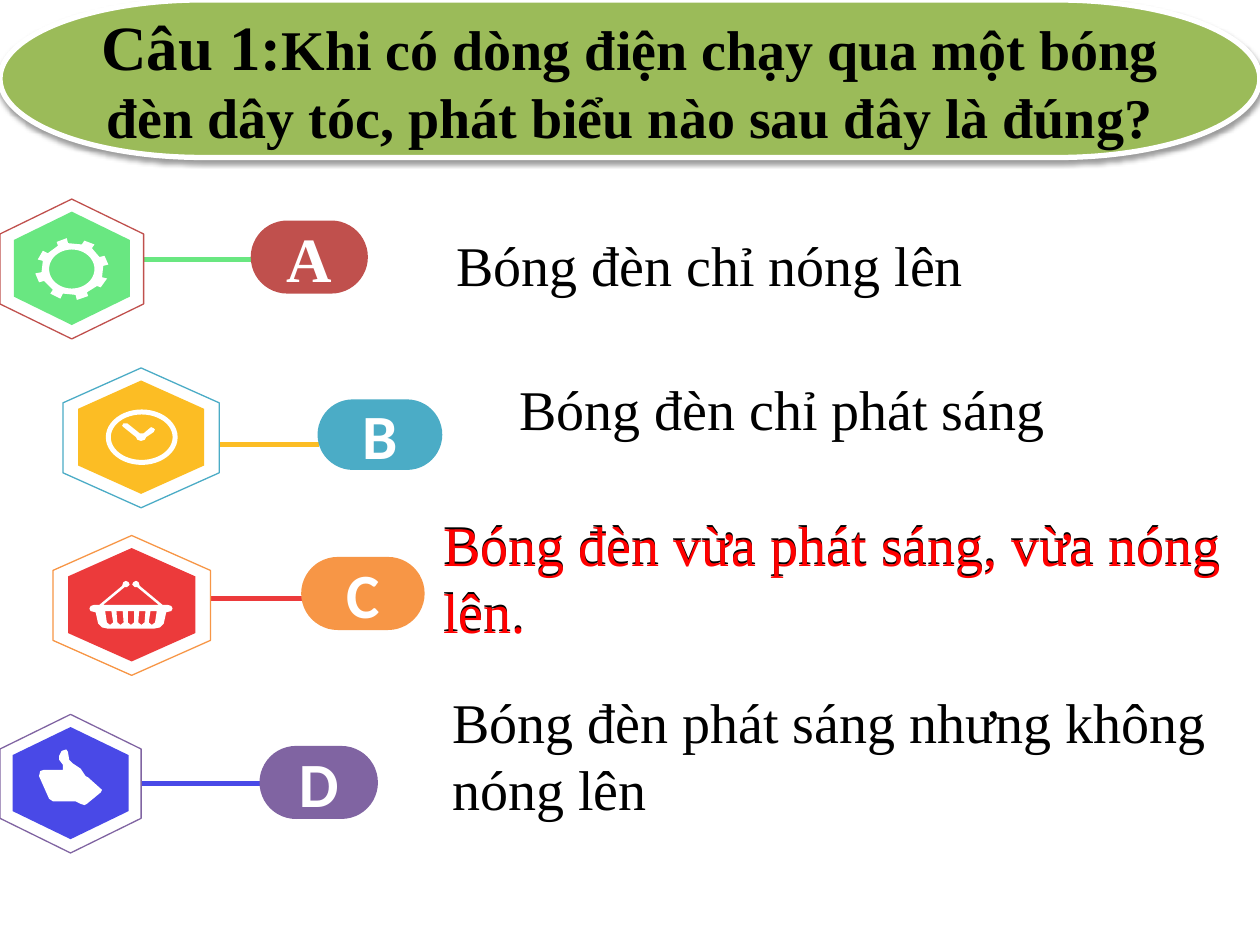
from dataclasses import dataclass
from math import cos, pi, sin

from lxml.etree import SubElement
from pptx import Presentation
from pptx.dml.color import RGBColor
from pptx.enum.shapes import MSO_CONNECTOR, MSO_SHAPE
from pptx.enum.text import MSO_ANCHOR, MSO_AUTO_SIZE, PP_ALIGN
from pptx.oxml.ns import qn
from pptx.util import Inches, Pt

Point = tuple[float, float]
Contour = list[Point]

COLORS = {
    "white": "FFFFFF", "black": "000000", "answer": "FF0000", "banner": "9BBB59",
    "brick": "C0504D", "teal": "4BACC6", "orange": "F79646", "purple": "8064A2",
    "green": "69E781", "yellow": "FCBD24", "red": "EC3A3B", "blue": "4949E7",
}
SERIF, SANS = "Times New Roman", "Calibri"


@dataclass
class Choice:
    letter: str
    letter_font: str
    text: str
    accent: str
    bright: str
    hexagon: tuple[float, float, float, float]
    border: float
    line: tuple[float, float, float]
    pill: tuple[float, float, float, float]
    text_box: tuple[float, float, float, float]
    indent: float


CORRECT = "Bóng đèn vừa phát sáng, vừa nóng lên."
CHOICES = [
    Choice("A", SERIF, "Bóng đèn chỉ nóng lên", "brick", "green", (0, 1.58, 1.14, 1.11),
           0.11, (1.07, 1.99, 2.06), (1.99, 1.75, 0.93, 0.58), (3.43, 1.88, 6.57, 0.44), 0.19),
    Choice("B", SANS, "Bóng đèn chỉ phát sáng", "teal", "yellow", (0.5, 2.92, 1.24, 1.11),
           0.12, (1.64, 2.53, 3.53), (2.52, 3.17, 0.99, 0.56), (3.93, 3.02, 6.07, 0.44), 0.19),
    Choice("C", SANS, CORRECT, "orange", "red", (0.42, 4.25, 1.25, 1.11),
           0.12, (1.56, 2.48, 4.75), (2.39, 4.42, 0.98, 0.58), (3.42, 4.35, 6.58, 0.44), 0.1),
    Choice("D", SANS, "Bóng đèn phát sáng nhưng không nóng lên", "purple", "blue",
           (0, 5.67, 1.12, 1.1),
           0.1, (1.04, 2.06, 6.22), (2.06, 5.92, 0.94, 0.58), (3.49, 5.77, 6.26, 0.44), 0.1),
]

GEAR_TEETH = [
    (0.53, 1.89), (0.45, 1.92), (0.46, 1.95), (0.38, 2.01), (0.34, 1.99), (0.3, 2.06),
    (0.34, 2.07), (0.33, 2.16), (0.28, 2.17), (0.31, 2.24), (0.35, 2.23), (0.42, 2.3),
    (0.4, 2.33), (0.48, 2.37), (0.5, 2.33), (0.6, 2.34), (0.61, 2.38), (0.7, 2.35),
    (0.69, 2.32), (0.77, 2.27), (0.8, 2.28), (0.85, 2.21), (0.81, 2.2), (0.82, 2.11),
    (0.86, 2.1), (0.83, 2.03), (0.79, 2.04), (0.73, 1.97), (0.75, 1.94), (0.67, 1.91),
    (0.65, 1.94), (0.54, 1.93),
]
CLOCK_HANDS = [
    (1, 3.36), (0.98, 3.36), (0.97, 3.38), (0.98, 3.39), (1.08, 3.47), (1.09, 3.49),
    (1.12, 3.5), (1.15, 3.49), (1.16, 3.47), (1.22, 3.43), (1.23, 3.41), (1.22, 3.4),
    (1.2, 3.39), (1.14, 3.44), (1.11, 3.44), (1.01, 3.36),
]
BASKET_CENTER = 1.04
BASKET_RIGHT = [
    (1.04, 4.8), (1.26, 4.8), (1.09, 4.66), (1.07, 4.66), (1.05, 4.64), (1.06, 4.62),
    (1.08, 4.61), (1.1, 4.62), (1.11, 4.65), (1.29, 4.8), (1.33, 4.8), (1.36, 4.81),
    (1.37, 4.83), (1.36, 4.85), (1.32, 4.86), (1.3, 4.95), (1.27, 4.98), (1.22, 4.99),
]
THUMB = [
    (0.52, 5.95), (0.49, 5.96), (0.47, 6), (0.47, 6.03), (0.5, 6.07), (0.5, 6.11),
    (0.35, 6.11), (0.32, 6.12), (0.31, 6.16), (0.39, 6.34), (0.42, 6.36), (0.6, 6.36),
    (0.64, 6.38), (0.67, 6.39), (0.69, 6.38), (0.8, 6.29), (0.81, 6.27), (0.8, 6.26),
    (0.7, 6.17), (0.68, 6.16), (0.64, 6.1), (0.58, 6.06), (0.55, 6.03), (0.54, 5.97),
    (0.53, 5.95),
]


def color(name: str) -> RGBColor:
    return RGBColor.from_string(COLORS[name])


def paint(shape, fill: str, line: str | None = None, width: float = 0.75) -> None:
    shape.shadow.inherit = False
    shape.fill.solid()
    shape.fill.fore_color.rgb = color(fill)
    if line:
        shape.line.color.rgb = color(line)
        shape.line.width = Pt(width)
    else:
        shape.line.fill.background()


def style(span, size: float, font: str, name: str, bold: bool = False) -> None:
    span.font.size, span.font.name, span.font.bold = Pt(size), font, bold
    span.font.color.rgb = color(name)


def draw_outline(slide, contours: list[Contour], fill: str, line: str | None = None) -> None:
    """Draw closed contours as one shape; contours inside another are holes."""
    scaled = [[(Inches(x), Inches(y)) for x, y in contour] for contour in contours]
    builder = slide.shapes.build_freeform(*scaled[0][0])
    builder.add_line_segments(scaled[0][1:], close=True)
    for hole in scaled[1:]:
        builder.move_to(*hole[0])
        builder.add_line_segments(hole[1:], close=True)
    paint(builder.convert_to_shape(), fill, line)


def hexagon(left: float, top: float, width: float, height: float) -> Contour:
    middle, right = left + width / 2, left + width
    upper, lower = top + height / 4, top + height * 3 / 4
    return [(middle, top), (left, upper), (left, lower),
            (middle, top + height), (right, lower), (right, upper)]


def draw_gear(slide) -> None:
    steps = [2 * pi * step / 48 for step in range(48)]
    hole = [(0.57 + 0.18 * cos(a), 2.135 + 0.155 * sin(a)) for a in steps]
    draw_outline(slide, [GEAR_TEETH, hole], "white")


def draw_clock(slide) -> None:
    ring = slide.shapes.add_shape(MSO_SHAPE.DONUT, *map(Inches, (0.84, 3.25, 0.57, 0.44)))
    ring.adjustments[0] = 0.09
    paint(ring, "white")
    draw_outline(slide, [CLOCK_HANDS], "white")


def draw_basket(slide) -> None:
    mirrored = [(2 * BASKET_CENTER - x, y) for x, y in reversed(BASKET_RIGHT[1:])]
    slots = []
    for index in range(-2, 3):
        top, bottom = BASKET_CENTER + 0.09 * index, BASKET_CENTER + 0.083 * index
        slots.append([(top - 0.025, 4.85), (top + 0.025, 4.85), (bottom + 0.025, 4.94),
                      (bottom, 4.96), (bottom - 0.025, 4.94)])
    draw_outline(slide, [BASKET_RIGHT + mirrored, *slots], "white")


def draw_thumb(slide) -> None:
    draw_outline(slide, [THUMB], "white")


def add_text(slide, area, text: str, name: str):
    box = slide.shapes.add_textbox(*map(Inches, area))
    frame = box.text_frame
    frame.word_wrap = True
    frame.text = text
    style(frame.paragraphs[0].runs[0], 32, SERIF, name)
    return frame


def set_margins(frame, left: float = 0.1) -> None:
    frame.margin_left = Inches(left)
    frame.margin_right = frame.margin_top = frame.margin_bottom = Inches(0.1)
    frame.vertical_anchor = MSO_ANCHOR.MIDDLE


def draw_choice(slide, choice: Choice, draw_icon) -> None:
    start, end, y = map(Inches, choice.line)
    link = slide.shapes.add_connector(MSO_CONNECTOR.STRAIGHT, start, y, end, y)
    link.line.color.rgb = color(choice.bright)
    link.line.width = Pt(2.65)
    SubElement(link._element.spPr, qn("a:effectLst"))

    left, top, width, height = choice.hexagon
    draw_outline(slide, [hexagon(*choice.hexagon)], "white", choice.accent)
    inner = hexagon(left + choice.border, top + 0.1, width - 2 * choice.border, height - 0.21)
    draw_outline(slide, [inner], choice.bright)
    draw_icon(slide)

    pill = slide.shapes.add_shape(MSO_SHAPE.ROUNDED_RECTANGLE, *map(Inches, choice.pill))
    pill.adjustments[0] = 0.5
    paint(pill, choice.accent)
    set_margins(pill.text_frame)
    pill.text_frame.text = choice.letter
    para = pill.text_frame.paragraphs[0]
    para.alignment = PP_ALIGN.CENTER
    style(para.runs[0], 36, choice.letter_font, "white", bold=True)

    set_margins(add_text(slide, choice.text_box, choice.text, "black"), choice.indent)


def draw_banner(slide):
    banner = slide.shapes.add_shape(MSO_SHAPE.FLOWCHART_TERMINATOR,
                                    *map(Inches, (0, 0, 10, 1.25)))
    paint(banner, "banner", "white", 3)
    effects = banner._element.spPr.find(qn("a:effectLst"))
    shadow = SubElement(effects, qn("a:outerShdw"), blurRad=str(Pt(3.1)), dist=str(Pt(1.6)),
                        dir="5400000", rotWithShape="0")
    tint = SubElement(shadow, qn("a:srgbClr"), val=COLORS["black"])
    SubElement(tint, qn("a:alpha"), val="38000")
    return banner


def draw_question(slide) -> None:
    title = slide.shapes.title
    title._element.addprevious(draw_banner(slide)._element)
    title.left, title.top, title.width, title.height = map(Inches, (0.5, 0, 9, 1.25))
    frame = title.text_frame
    frame.word_wrap = True
    frame.auto_size = MSO_AUTO_SIZE.NONE
    frame.vertical_anchor = MSO_ANCHOR.MIDDLE
    para = frame.paragraphs[0]
    para.alignment = PP_ALIGN.CENTER
    question = "Khi có dòng điện chạy qua một bóng đèn dây tóc, phát biểu nào sau đây là đúng?"
    for text, size in (("Câu 1:", 36), (question, 32)):
        span = para.add_run()
        span.text = text
        style(span, size, SERIF, "black", bold=True)


def main() -> None:
    deck = Presentation()
    deck.slide_width, deck.slide_height = Inches(10), Inches(7.5)
    slide = deck.slides.add_slide(deck.slide_layouts[5])
    draw_question(slide)
    for choice, icon in zip(CHOICES, (draw_gear, draw_clock, draw_basket, draw_thumb)):
        draw_choice(slide, choice, icon)
    add_text(slide, (3.42, 4, 6.42, 1.18), CORRECT, "answer")
    deck.save("out.pptx")


if __name__ == "__main__":
    main()
